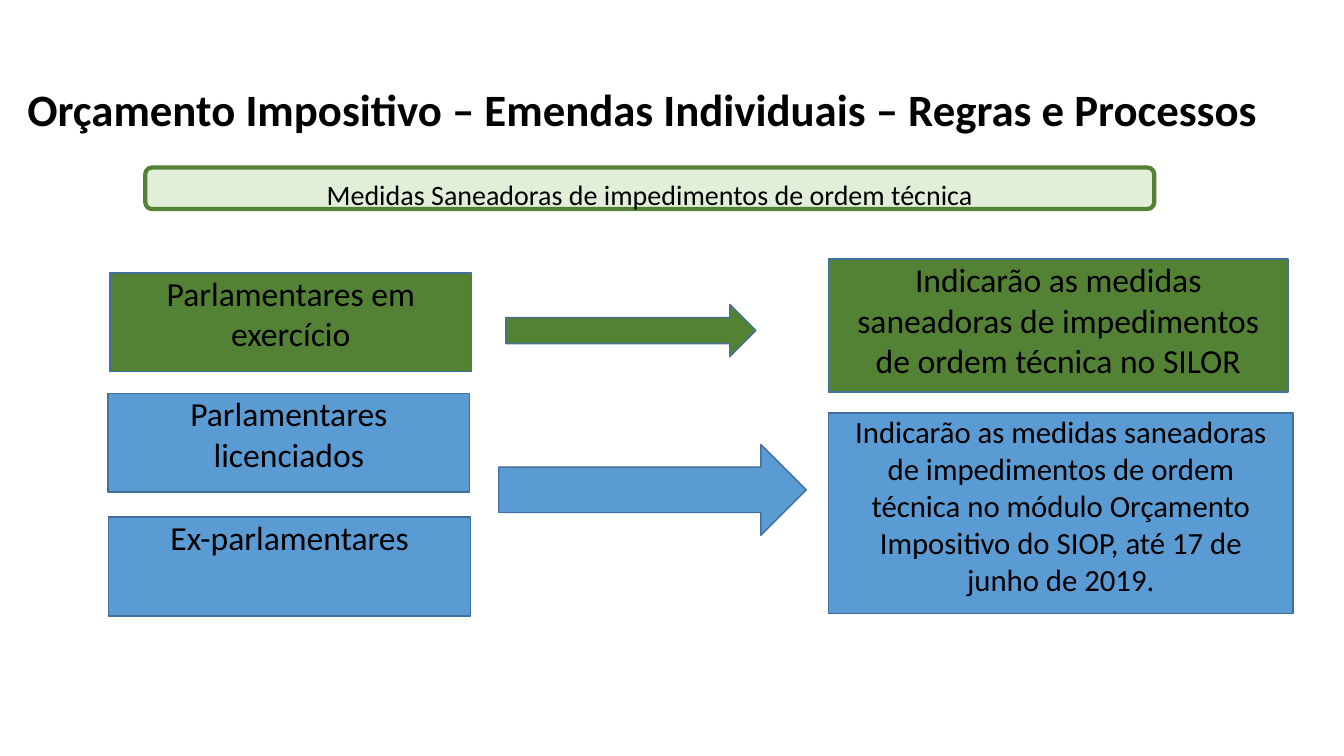
"""Build the slide on remedial measures for individual budget amendments."""
from dataclasses import dataclass
from typing import Optional

import pptx
import pptx.dml.color
import pptx.enum.shapes
import pptx.enum.text
import pptx.shapes.autoshape
import pptx.slide
import pptx.text.text
import pptx.util

Cm = pptx.util.Cm
Pt = pptx.util.Pt
RGBColor = pptx.dml.color.RGBColor
ShapeKind = pptx.enum.shapes.MSO_SHAPE
Align = pptx.enum.text.PP_ALIGN

BLACK = RGBColor(0x00, 0x00, 0x00)
GREEN = RGBColor(0x53, 0x82, 0x35)
PALE_GREEN = RGBColor(0xE1, 0xEF, 0xD9)
BLUE = RGBColor(0x5B, 0x9B, 0xD4)
OUTLINE = RGBColor(0x41, 0x70, 0x9C)
FONT = "Calibri"


@dataclass(frozen=True)
class Block:
    """A filled shape with optional text, measured in centimetres."""

    kind: ShapeKind
    left: float
    top: float
    width: float
    height: float
    fill: RGBColor
    text: Optional[str] = None
    size: int = 24
    side_margin: float = 0.5
    top_margin: float = 0
    line: RGBColor = OUTLINE
    line_width: float = 0.96


BLOCKS = (
    Block(ShapeKind.ROUNDED_RECTANGLE, 3.66, 4.22, 25.43, 1.05, PALE_GREEN,
          "Medidas Saneadoras de impedimentos de ordem técnica",
          size=20, top_margin=0.2, line=GREEN, line_width=3),
    Block(ShapeKind.RECTANGLE, 2.77, 6.88, 9.12, 2.49, GREEN,
          "Parlamentares em\nexercício", side_margin=1.1),
    Block(ShapeKind.RECTANGLE, 2.72, 9.91, 9.12, 2.49, BLUE,
          "Parlamentares licenciados", side_margin=1.1),
    Block(ShapeKind.RECTANGLE, 2.74, 13.03, 9.12, 2.49, BLUE,
          "Ex-parlamentares", side_margin=1.1),
    Block(ShapeKind.RIGHT_ARROW, 12.57, 11.2, 7.75, 2.29, BLUE),
    Block(ShapeKind.RECTANGLE, 20.88, 10.41, 11.71, 5.05, BLUE,
          "Indicarão as medidas saneadoras de impedimentos de ordem técnica no "
          "módulo Orçamento Impositivo do SIOP, até 17 de junho de 2019.", size=22),
    Block(ShapeKind.RIGHT_ARROW, 12.75, 7.67, 6.3, 1.32, GREEN),
    Block(ShapeKind.RECTANGLE, 20.88, 6.53, 11.58, 3.35, GREEN,
          "Indicarão as medidas saneadoras de impedimentos de ordem técnica no SILOR"),
)


def write_text(frame: pptx.text.text.TextFrame, text: str, size: int,
               align: Align, side_margin: float = 0, top_margin: float = 0,
               bold: bool = False) -> None:
    """Fill a text frame from the top with evenly styled paragraphs."""
    frame.text = text
    frame.word_wrap = True
    frame.vertical_anchor = pptx.enum.text.MSO_ANCHOR.TOP
    frame.margin_left = frame.margin_right = Cm(side_margin)
    frame.margin_top = Cm(top_margin)
    frame.margin_bottom = 0
    for paragraph in frame.paragraphs:
        paragraph.alignment = align
        paragraph.font.name = FONT
        paragraph.font.size = Pt(size)
        paragraph.font.bold = bold
        paragraph.font.color.rgb = BLACK


def draw_block(slide: pptx.slide.Slide, block: Block) -> pptx.shapes.autoshape.Shape:
    """Draw one block and its text on the slide."""
    shape = slide.shapes.add_shape(block.kind, Cm(block.left), Cm(block.top),
                                   Cm(block.width), Cm(block.height))
    shape.shadow.inherit = False
    shape.fill.solid()
    shape.fill.fore_color.rgb = block.fill
    shape.line.color.rgb = block.line
    shape.line.width = Pt(block.line_width)
    if block.text:
        write_text(shape.text_frame, block.text, block.size, Align.CENTER,
                   block.side_margin, block.top_margin)
    return shape


def main() -> None:
    """Create and save the presentation."""
    presentation = pptx.Presentation()
    presentation.slide_width = Cm(33.87)
    presentation.slide_height = Cm(19.05)
    slide = presentation.slides.add_slide(presentation.slide_layouts[6])
    for block in BLOCKS:
        draw_block(slide, block)
    title = slide.shapes.add_textbox(Cm(0.69), Cm(2.06), Cm(31.78), Cm(1.37))
    write_text(title.text_frame,
               "Orçamento Impositivo – Emendas Individuais – Regras e Processos",
               32, Align.LEFT, bold=True)
    presentation.save("out.pptx")


if __name__ == "__main__":
    main()
